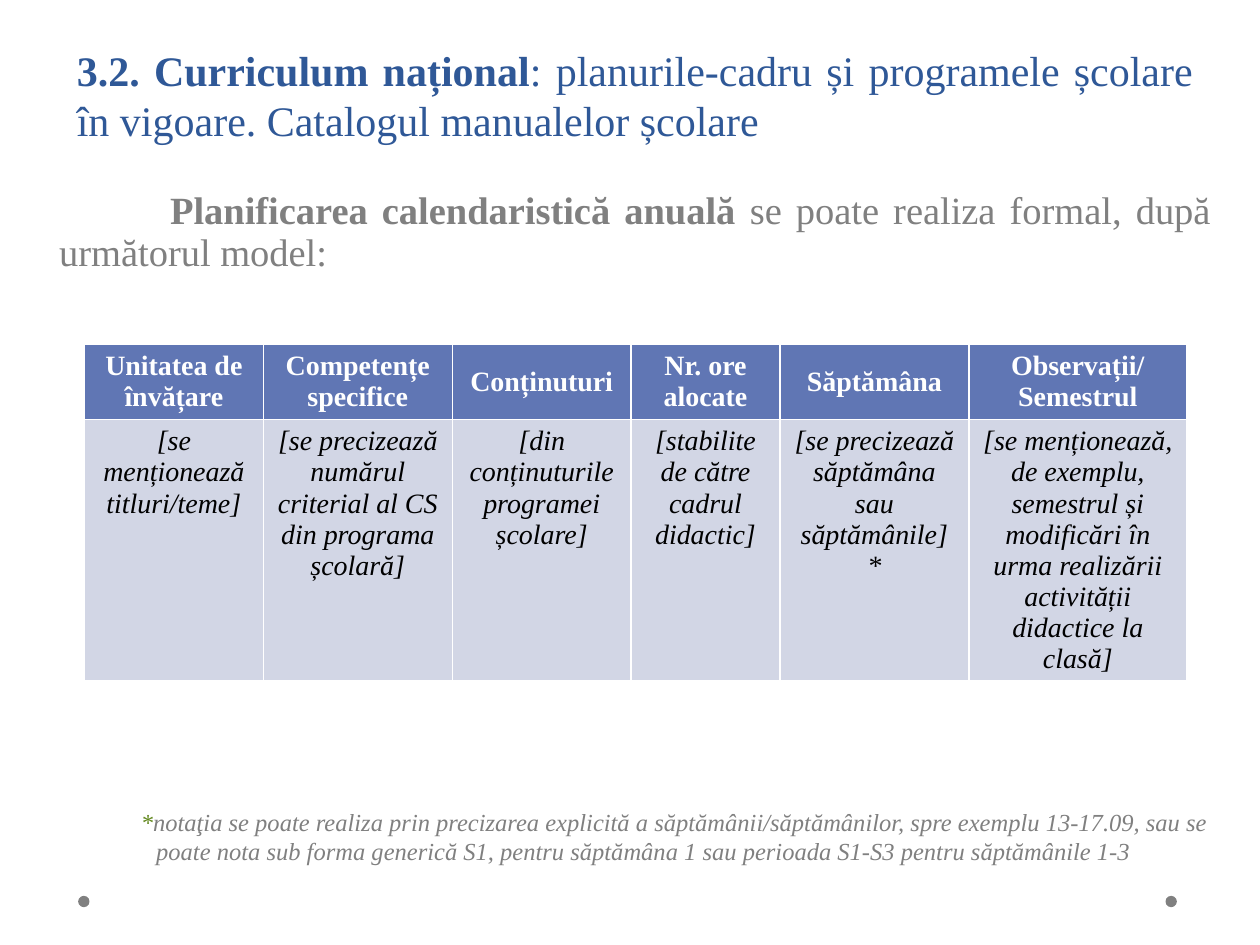
from pptx import Presentation
from pptx.dml.color import RGBColor
from pptx.enum import shapes, text
from pptx.oxml.ns import qn
from pptx.util import Inches, Pt

THEME = {
    "font": "Times New Roman",
    "blue": "2F5897", "gray": "808080", "green": "63891F",
    "head": "6076B4", "cell": "D2D6E5", "white": "FFFFFF", "black": "000000",
    "title": 24, "body": 22, "table": 16, "note": 14,
}

# Each run: text, colour, bold, italic
TITLE = [("3.2. Curriculum național", "blue", True, False),
         (": planurile-cadru și programele școlare în vigoare. "
          "Catalogul manualelor școlare", "blue", False, False)]
BODY = [("Planificarea calendaristică anuală", "gray", True, False),
        (" se poate realiza formal, după următorul model:", "gray", False, False)]
NOTE = [("*", "green", False, True),
        ("notaţia se poate realiza prin precizarea explicită a "
         "săptămânii/săptămânilor, spre exemplu 13-17.09, sau se poate nota sub "
         "forma generică S1, pentru săptămâna 1 sau perioada S1-S3 pentru "
         "săptămânile 1-3", "gray", False, True)]

# Each column: width, heading, heading anchor, entry
TOP, MIDDLE = text.MSO_ANCHOR.TOP, text.MSO_ANCHOR.MIDDLE
COLUMNS = [
    (1.42, "Unitatea de învățare", TOP, "[se menționează titluri/teme]"),
    (1.5, "Competențe specifice", MIDDLE,
     "[se precizează numărul criterial al CS din programa școlară]"),
    (1.42, "Conținuturi", MIDDLE, "[din conținuturile programei școlare]"),
    (1.18, "Nr. ore alocate", MIDDLE, "[stabilite de către cadrul didactic]"),
    (1.5, "Săptămâna", MIDDLE, "[se precizează săptămâna sau săptămânile] *"),
    (1.73, "Observații/ Semestrul", TOP,
     "[se menționează, de exemplu, semestrul și modificări în urma realizării "
     "activității didactice la clasă]"),
]
ROWS = [0.6, 2.06]
DOTS = [0.62, 9.25]


def color(name):
    return RGBColor.from_string(THEME[name])


def write(frame, runs, size, align, indent=0):
    frame.word_wrap = True
    para = frame.paragraphs[0]
    para.alignment = align
    for words, tone, bold, italic in runs:
        run = para.add_run()
        run.text = words
        font = run.font
        font.name, font.size = THEME["font"], Pt(THEME[size])
        font.bold, font.italic = bold, italic
        font.color.rgb = color(tone)
    if indent:
        props = para._p.get_or_add_pPr()
        props.set("marL", "0")
        props.set("indent", str(Inches(indent)))
        props.get_or_add_buNone() if hasattr(props, "get_or_add_buNone") else \
            props.append(props.makeelement(qn("a:buNone"), {}))
    return para


def place(shape, left, top, width, height):
    shape.left, shape.top = Inches(left), Inches(top)
    shape.width, shape.height = Inches(width), Inches(height)


def add_plan(slide):
    width = sum(col[0] for col in COLUMNS)
    table = slide.shapes.add_table(
        2, len(COLUMNS), Inches(0.67), Inches(2.73),
        Inches(width), Inches(sum(ROWS))).table
    for row, height in zip(table.rows, ROWS):
        row.height = Inches(height)
    for i, (width, head, anchor, entry) in enumerate(COLUMNS):
        table.columns[i].width = Inches(width)
        parts = [("head", anchor, (head, "white", True, False)),
                 ("cell", TOP, (entry, "black", False, True))]
        for j, (fill, side, run) in enumerate(parts):
            cell = table.cell(j, i)
            cell.fill.solid()
            cell.fill.fore_color.rgb = color(fill)
            cell.vertical_anchor = side
            write(cell.text_frame, [run], "table", text.PP_ALIGN.CENTER)


def main():
    deck = Presentation()
    deck.slide_width, deck.slide_height = Inches(10), Inches(7.5)
    slide = deck.slides.add_slide(deck.slide_layouts[1])

    for left in DOTS:
        dot = slide.shapes.add_shape(
            shapes.MSO_SHAPE.OVAL, Inches(left), Inches(7.11),
            Inches(0.09), Inches(0.09))
        dot.shadow.inherit = False
        dot.fill.solid()
        dot.fill.fore_color.rgb = color("gray")
        dot.line.fill.background()

    title, body = slide.shapes.title, slide.placeholders[1]
    place(title, 0.51, 0.36, 9.06, 0.84)
    title.text_frame.auto_size = text.MSO_AUTO_SIZE.NONE
    title.text_frame.vertical_anchor = text.MSO_ANCHOR.BOTTOM
    write(title.text_frame, TITLE, "title", text.PP_ALIGN.JUSTIFY)

    place(body, 0.37, 1.47, 9.34, 1.81)
    body.text_frame.auto_size = text.MSO_AUTO_SIZE.NONE
    para = write(body.text_frame, BODY, "body", text.PP_ALIGN.JUSTIFY, 0.88)
    para.line_spacing = 0.9
    para.space_before = Pt(0)

    add_plan(slide)

    note = slide.shapes.add_textbox(
        Inches(0.51), Inches(6.35), Inches(9.2), Inches(0.57))
    note.text_frame.vertical_anchor = MIDDLE
    write(note.text_frame, NOTE, "note", text.PP_ALIGN.CENTER, 0.49)

    deck.save("out.pptx")


if __name__ == "__main__":
    main()
